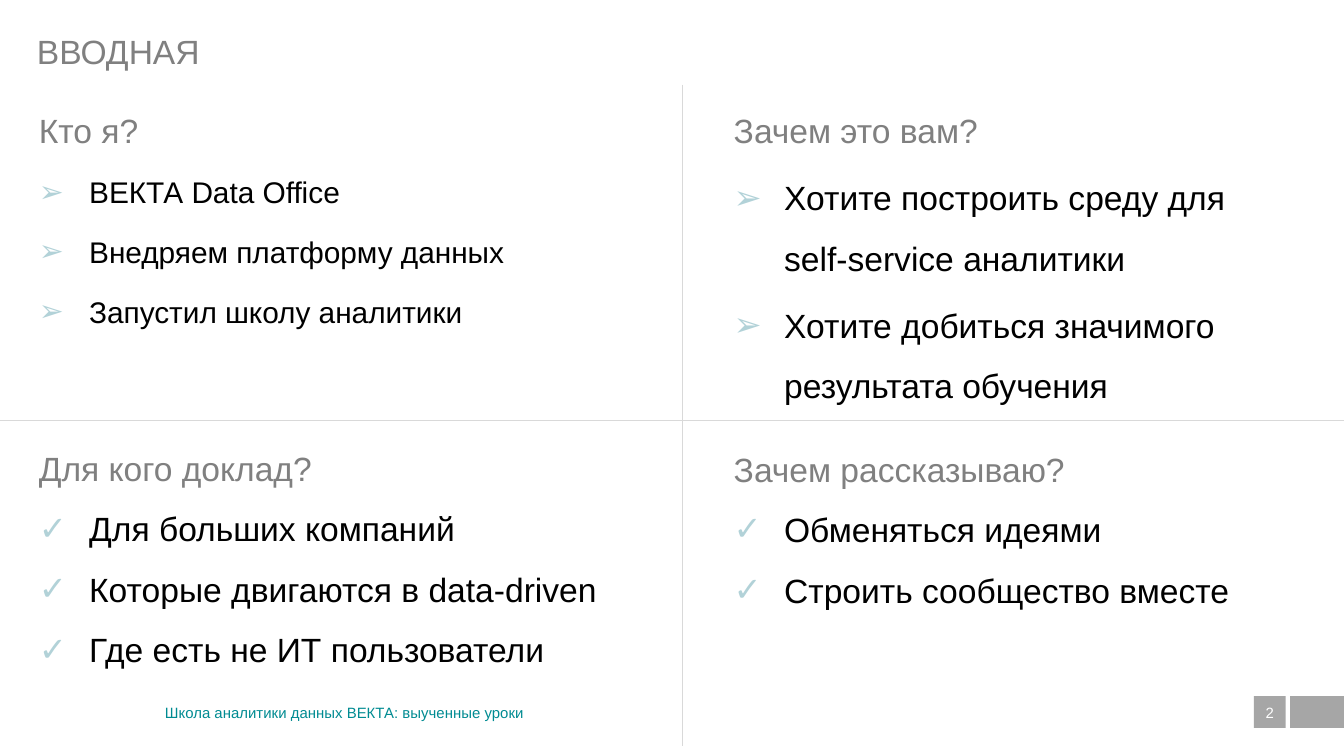
"""Build the introduction slide: four question quadrants with a title and footer."""
from lxml.etree import SubElement
from pptx import Presentation
from pptx.dml.color import RGBColor
from pptx.enum.shapes import MSO_CONNECTOR, MSO_SHAPE
from pptx.enum.text import MSO_ANCHOR, PP_ALIGN
from pptx.oxml.ns import qn
from pptx.util import Pt

BLACK = RGBColor(0x00, 0x00, 0x00)
WHITE = RGBColor(0xFF, 0xFF, 0xFF)
GRAY = RGBColor(0x80, 0x80, 0x80)
BLOCK_GRAY = RGBColor(0xA6, 0xA6, 0xA6)
LINE_GRAY = RGBColor(0xD9, 0xD9, 0xD9)
TEAL = RGBColor(0x00, 0x8B, 0x92)
BULLET_BLUE = "B2D2D8"
INDENT = Pt(27)


def write(para, text, size, color):
    para.text = text
    for span in para.runs:
        for name, value in {"name": "Arial", "size": Pt(size)}.items():
            setattr(span.font, name, value)
        span.font.color.rgb = color


def set_frame(frame, **values):
    for name, value in {"word_wrap": True, **values}.items():
        setattr(frame, name, value)


NO_INSETS = dict.fromkeys(("margin_left", "margin_top", "margin_right", "margin_bottom"), 0)

deck = Presentation()
deck.slide_width, deck.slide_height = Pt(720), Pt(405)
page = deck.slides.add_slide(deck.slide_layouts[6])

blocks = []
for left, width in ((691.2, 28.8), (671.8, 17)):
    block = page.shapes.add_shape(MSO_SHAPE.RECTANGLE, Pt(left), Pt(373), Pt(width), Pt(17))
    block.shadow.inherit = False
    block.fill.solid()
    block.fill.fore_color.rgb = BLOCK_GRAY
    block.line.fill.background()
    blocks.append(block)
number = blocks[1].text_frame
set_frame(number, vertical_anchor=MSO_ANCHOR.MIDDLE, **NO_INSETS)
number.paragraphs[0].alignment = PP_ALIGN.CENTER
write(number.paragraphs[0], "2", 8, WHITE)

for left, top, width, height, text, size, color, insets in (
    (19.8, 10.4, 601, 34, "ВВОДНАЯ", 18, GRAY, NO_INSETS),
    (81.2, 373, 588, 17, "Школа аналитики данных ВЕКТА: выученные уроки", 8, TEAL, {}),
):
    box = page.shapes.add_textbox(Pt(left), Pt(top), Pt(width), Pt(height))
    set_frame(box.text_frame, vertical_anchor=MSO_ANCHOR.MIDDLE, **insets)
    write(box.text_frame.paragraphs[0], text, size, color)

quadrants = (
    (13.7, 44.6, 331, 161, "➢", 16, 3.2, "Кто я?",
     ("ВЕКТА Data Office", "Внедряем платформу данных", "Запустил школу аналитики")),
    (386, 44.6, 334, 178, "➢", 18, 3.6, "Зачем это вам?",
     ("Хотите построить среду для\nself-service аналитики",
      "Хотите добиться значимого результата обучения")),
    (13.7, 225.6, 345, 134, "✓", 18, 0, "Для кого доклад?",
     ("Для больших компаний", "Которые двигаются в data-driven", "Где есть не ИТ пользователи")),
    (386, 226, 334, 102, "✓", 18, 0, "Зачем рассказываю?",
     ("Обменяться идеями", "Строить сообщество вместе")),
)
for left, top, width, height, mark, size, gap, heading, items in quadrants:
    box = page.shapes.add_textbox(Pt(left), Pt(top), Pt(width), Pt(height))
    set_frame(box.text_frame)
    para = box.text_frame.paragraphs[0]
    para.line_spacing = 1.5
    write(para, heading, 18, GRAY)
    for item in items:
        para = box.text_frame.add_paragraph()
        para.line_spacing = 1.5
        para.space_before = Pt(gap)
        settings = para._p.get_or_add_pPr()
        settings.set("marL", str(INDENT))
        settings.set("indent", str(-INDENT))
        bullet_color = SubElement(settings, qn("a:buClr"))
        SubElement(bullet_color, qn("a:srgbClr"), val=BULLET_BLUE)
        SubElement(settings, qn("a:buFont"), typeface="Arial")
        SubElement(settings, qn("a:buChar"), char=mark)
        write(para, item, size, BLACK)

for ends in ((0, 225.4, 720, 225.4), (365.8, 45.4, 365.8, 399.6)):
    divider = page.shapes.add_connector(MSO_CONNECTOR.STRAIGHT, *map(Pt, ends))
    divider.line.color.rgb = LINE_GRAY
    divider.line.width = Pt(0.75)
    SubElement(divider._element.spPr, qn("a:effectLst"))

deck.save("out.pptx")
